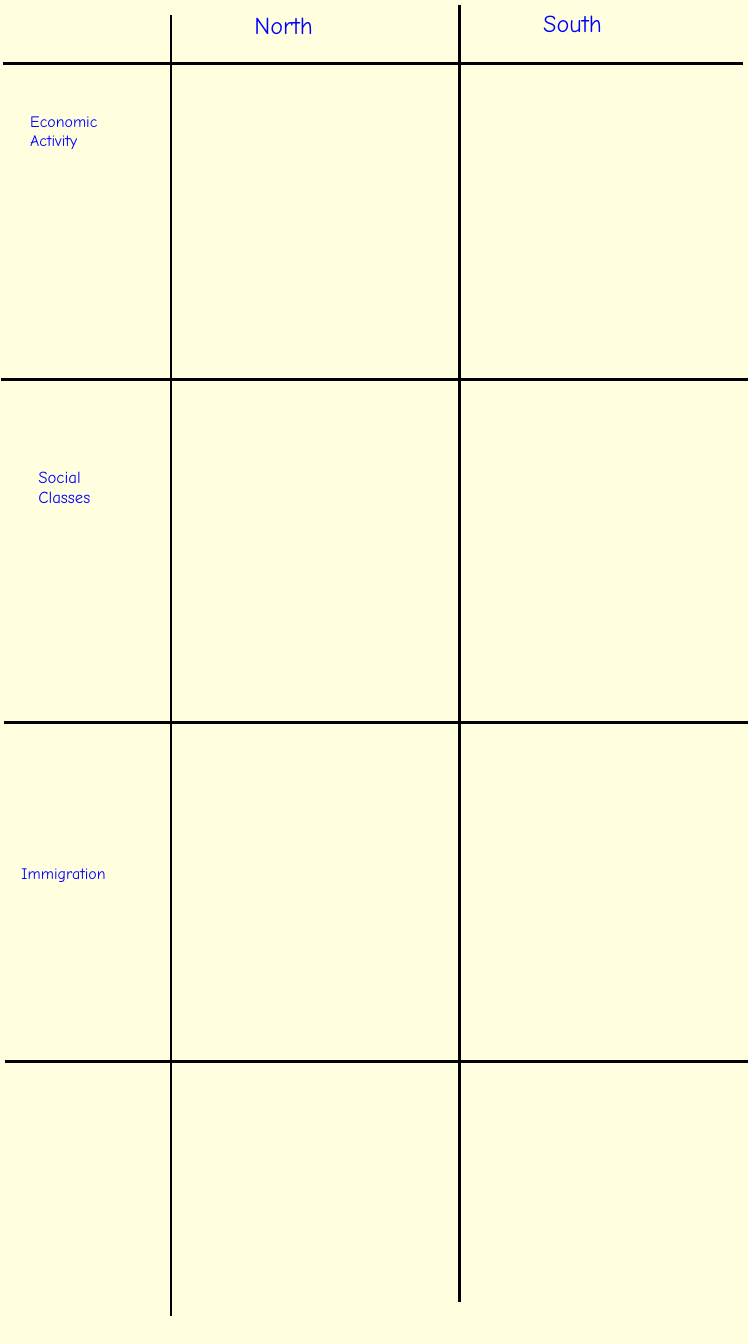
from pptx import Presentation
from pptx.dml.color import RGBColor
from pptx.enum.shapes import MSO_CONNECTOR
from pptx.oxml.xmlchemy import OxmlElement
from pptx.util import Pt

PX = 9144
WIDTH, HEIGHT = 1111, 1996
CREAM = RGBColor(0xFF, 0xFF, 0xE0)
BLACK = RGBColor(0x00, 0x00, 0x00)
BLUE = RGBColor(0x00, 0x00, 0xFF)
FONT = "Comic Neue"

COLUMN_RULES = [(254, 23, 1954), (683, 7, 1933)]
ROW_RULES = [(94, 5, 1104), (564, 1, WIDTH), (1073, 6, WIDTH), (1577, 7, WIDTH)]
HEADINGS = [("North", 368, 11, 206), ("South", 797, 7, 203)]
TOPICS = [
    ("Economic\nActivity", 35, 161, 200, 67, 17),
    ("Social\nClasses", 47, 688, 161, 71, 18),
    ("Immigration", 22, 1278, 239, 39, 17),
]


def px(length):
    return length * PX


def add_rule(page, x1, y1, x2, y2):
    rule = page.shapes.add_connector(
        MSO_CONNECTOR.STRAIGHT, px(x1), px(y1), px(x2), px(y2)
    )
    rule.line.color.rgb = BLACK
    rule.line.width = Pt(3)
    rule._element.spPr.append(OxmlElement("a:effectLst"))


def add_text(page, text, *, left, top, width, height, size, color=BLUE):
    box = page.shapes.add_textbox(px(left), px(top), px(width), px(height))
    frame = box.text_frame
    frame.word_wrap = True
    frame.text = text
    for para in frame.paragraphs:
        for span in para.runs:
            span.font.name = FONT
            span.font.size = Pt(size)
            span.font.color.rgb = color


def main():
    deck = Presentation()
    deck.slide_width, deck.slide_height = px(WIDTH), px(HEIGHT)
    page = deck.slides.add_slide(deck.slide_layouts[6])
    page.background.fill.solid()
    page.background.fill.fore_color.rgb = CREAM

    for x, top, bottom in COLUMN_RULES:
        add_rule(page, x, top, x, bottom)
    for y, left, right in ROW_RULES:
        add_rule(page, left, y, right, y)
    for text, left, top, width in HEADINGS:
        add_text(page, text, left=left, top=top, width=width, height=54, size=26)
    for text, left, top, width, height, size in TOPICS:
        add_text(page, text, left=left, top=top, width=width, height=height, size=size)

    deck.save("out.pptx")


if __name__ == "__main__":
    main()
